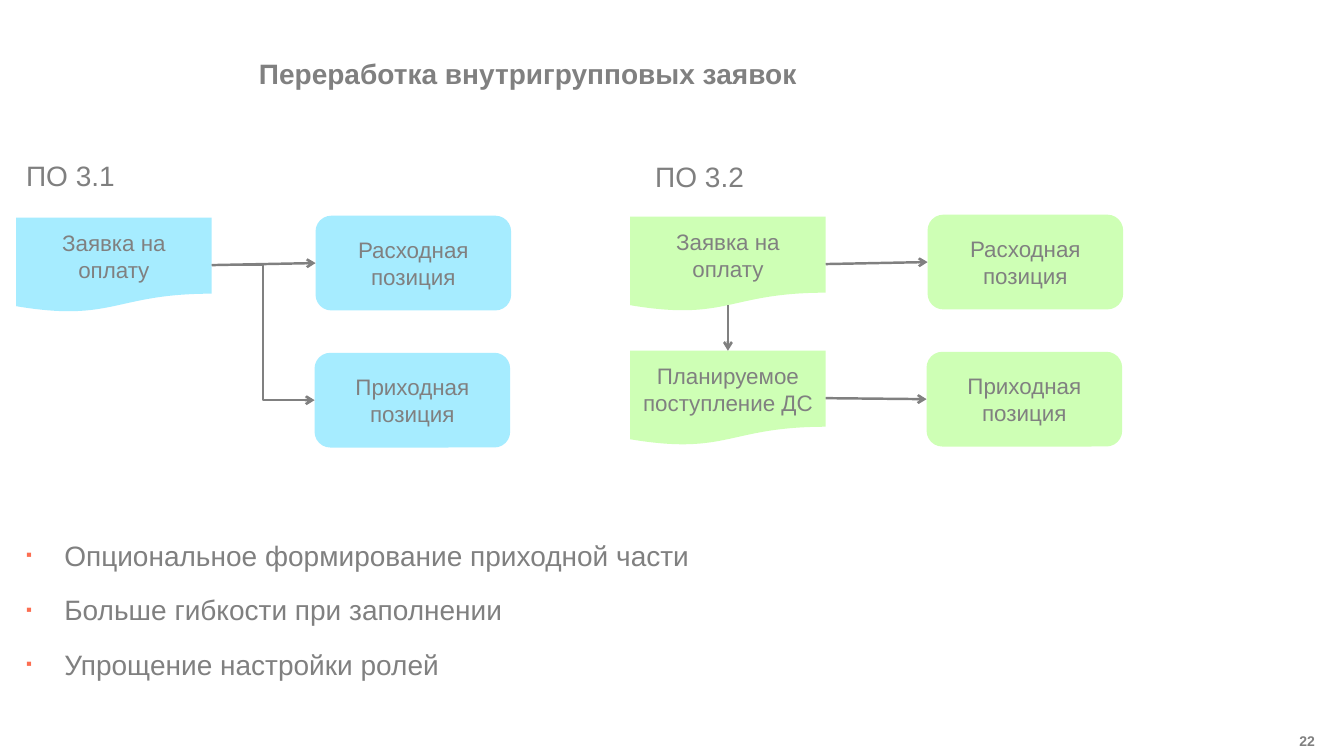
from lxml import etree
from pptx import Presentation
from pptx import util as u
from pptx.dml.color import RGBColor
from pptx.enum import shapes, text
from pptx.oxml.ns import qn

# Content
TITLE = "Переработка внутригрупповых заявок"
PAGE_NUMBER = "22"
BENEFITS = [
    "Опциональное формирование приходной части",
    "Больше гибкости при заполнении",
    "Упрощение настройки ролей",
]
COLORS = {"text": "808080", "heading": "7F7F7F", "bullet": "FC6E51",
          "old": "A6ECFF", "new": "CEFFB5"}
FONT = "Arial"

# Nodes: name -> (kind, label, row); links: (from, side, to, side, form)
POSITIONS = {
    "expense": ("position", "Расходная позиция", 0),
    "income": ("position", "Приходная позиция", 1),
}
REQUEST = {"request": ("document", "Заявка на оплату", 0)}
RECEIPT = {"receipt": ("document", "Планируемое поступление ДС", 1)}
TOP, LEFT, BOTTOM, RIGHT = range(4)
VERSIONS = [
    {"heading": "ПО 3.1", "heading_at": (0.16, 1.52), "color": "old",
     "left": 0.16, "top": 2.16, "position_offset": 2.97,
     "nodes": {**REQUEST, **POSITIONS},
     "links": [("request", RIGHT, "expense", LEFT, "STRAIGHT"),
               ("request", RIGHT, "income", LEFT, "ELBOW")]},
    {"heading": "ПО 3.2", "heading_at": (6.4, 1.53), "color": "new",
     "left": 6.25, "top": 2.15, "position_offset": 2.95,
     "nodes": {**REQUEST, **RECEIPT, **POSITIONS},
     "links": [("request", RIGHT, "expense", LEFT, "STRAIGHT"),
               ("receipt", RIGHT, "income", LEFT, "STRAIGHT"),
               ("request", BOTTOM, "receipt", TOP, "STRAIGHT")]},
]

# Grid, in inches
NODE_WIDTH, NODE_HEIGHT = 1.94, 0.94
ROW_STEP = {"document": 1.33, "position": 1.36}
POSITION_RISE = 0.02      # positions sit slightly above the documents
INCOME_SHIFT = 0.01       # second position sits slightly to the left
WAVE_DEPTH = 0.06         # wave of a document above its lower edge, at mid-width
PRESETS = {"document": shapes.MSO_SHAPE.FLOWCHART_DOCUMENT,
           "position": shapes.MSO_SHAPE.ROUNDED_RECTANGLE}

presentation = Presentation()
presentation.slide_width = u.Inches(13.33)
presentation.slide_height = u.Inches(7.5)
slide = presentation.slides.add_slide(presentation.slide_layouts[6])


def color(name):
    return RGBColor.from_string(COLORS[name])


def format_runs(frame, size, bold=False, color_name="text", align=None):
    for paragraph in frame.paragraphs:
        paragraph.alignment = align
        for run in paragraph.runs:
            run.font.name = FONT
            run.font.size = u.Pt(size)
            run.font.bold = bold
            run.font.color.rgb = color(color_name)


def add_text(box, words, size, anchor=text.MSO_ANCHOR.TOP, **style):
    frame = slide.shapes.add_textbox(*map(u.Inches, box)).text_frame
    frame.word_wrap = True
    frame.vertical_anchor = anchor
    frame.text = words
    format_runs(frame, size, **style)
    return frame


def add_bullet(paragraph):
    properties = paragraph._p.get_or_add_pPr()
    indent = u.Inches(0.38)
    properties.set("marL", str(indent))
    properties.set("indent", str(-indent))
    bullet_color = etree.SubElement(properties, qn("a:buClr"))
    etree.SubElement(bullet_color, qn("a:srgbClr"), val=COLORS["bullet"])
    etree.SubElement(properties, qn("a:buSzPct"), val="60000")
    etree.SubElement(properties, qn("a:buFont"), typeface=FONT)
    etree.SubElement(properties, qn("a:buChar"), char="▪")


def add_node(version, kind, label, row):
    left = version["left"]
    top = version["top"] + row * ROW_STEP[kind]
    if kind == "position":
        left += version["position_offset"] - row * INCOME_SHIFT
        top -= POSITION_RISE
    shape = slide.shapes.add_shape(
        PRESETS[kind], *map(u.Inches, (left, top, NODE_WIDTH, NODE_HEIGHT)))
    shape.shadow.inherit = False
    shape.fill.solid()
    shape.fill.fore_color.rgb = color(version["color"])
    shape.line.fill.background()
    frame = shape.text_frame
    frame.word_wrap = True
    frame.vertical_anchor = text.MSO_ANCHOR.MIDDLE
    frame.text = label
    format_runs(frame, 16, align=text.PP_ALIGN.CENTER)
    return shape


def add_arrow(start, start_side, end, end_side, form):
    arrow = slide.shapes.add_connector(shapes.MSO_CONNECTOR[form], 0, 0, 0, 0)
    arrow.begin_connect(start, start_side)
    arrow.end_connect(end, end_side)
    if start_side == BOTTOM:
        arrow.begin_y = arrow.begin_y - u.Inches(WAVE_DEPTH)
    arrow.line.width = u.Pt(1.75)
    arrow.line.color.rgb = color("text")
    etree.SubElement(arrow.line._get_or_add_ln(), qn("a:tailEnd"), type="arrow")
    etree.SubElement(arrow._element.spPr, qn("a:effectLst"))


# Title
title = add_text((2.47, 0.17, 7.03, 1.18), TITLE, 20, text.MSO_ANCHOR.MIDDLE, bold=True)
title.paragraphs[0].line_spacing = 0.8

# Flow of each version
for version in VERSIONS:
    add_text((*version["heading_at"], 1.65, 0.44), version["heading"], 20,
             color_name="heading")
    nodes = {name: add_node(version, *node) for name, node in version["nodes"].items()}
    for start, start_side, end, end_side, form in version["links"]:
        add_arrow(nodes[start], start_side, nodes[end], end_side, form)

# Benefits
benefits = add_text((0.16, 5.29, 6.9, 1.93), "\n".join(BENEFITS), 20)
for paragraph in benefits.paragraphs:
    add_bullet(paragraph)
    paragraph.space_after = u.Pt(15)

# Page number
add_text((12.02, 7.22, 1.12, 0.28), PAGE_NUMBER, 10, bold=True,
         align=text.PP_ALIGN.RIGHT)

presentation.save("out.pptx")
